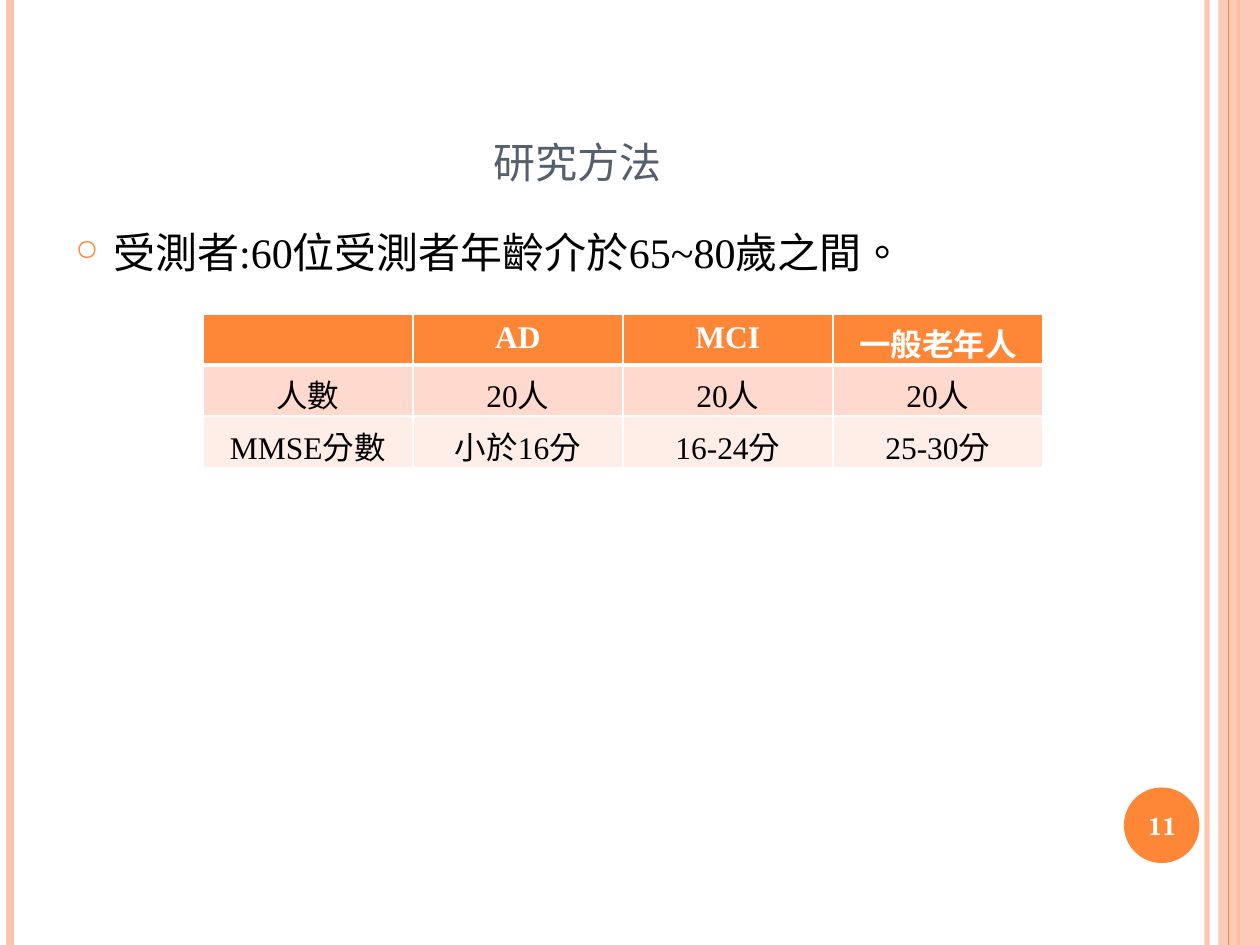
import dataclasses

import lxml.etree
import pptx
import pptx.dml.color
import pptx.enum.shapes
import pptx.enum.text
import pptx.oxml.ns
import pptx.util

RGB = pptx.dml.color.RGBColor
ORANGE = RGB(0xFE, 0x86, 0x37)
PEACH = RGB(0xFE, 0xC3, 0xAE)
BAND_DARK = RGB(0xFF, 0xD9, 0xCE)
BAND_LIGHT = RGB(0xFF, 0xED, 0xE8)
SLATE = RGB(0x57, 0x5F, 0x6D)
BLACK = RGB(0, 0, 0)
WHITE = RGB(0xFF, 0xFF, 0xFF)

CJK = "Noto Sans CJK SC"
SERIF = "Times New Roman"
SCHOOL = "TeX Gyre Schola"
WIDTH, HEIGHT = pptx.util.Inches(10), pptx.util.Inches(7.5)
MIDDLE = pptx.enum.text.MSO_ANCHOR.MIDDLE
CENTER = pptx.enum.text.PP_ALIGN.CENTER


@dataclasses.dataclass(frozen=True)
class Box:
    """A place on the slide, in shares of its width and height."""
    left: float
    top: float
    width: float
    height: float

    def emu(self) -> tuple[int, int, int, int]:
        return (int(self.left * WIDTH), int(self.top * HEIGHT),
                int(self.width * WIDTH), int(self.height * HEIGHT))


@dataclasses.dataclass(frozen=True)
class Stripe:
    x: float
    color: RGB
    points: float
    opacity: int = 100


@dataclasses.dataclass(frozen=True)
class Style:
    size: float
    color: RGB
    font: str = SERIF
    bold: bool = False


STRIPES_BEHIND = [Stripe(0.958, PEACH, 3, 93), Stripe(0.008, PEACH, 4.5),
                  Stripe(0.983, ORANGE, 1.5)]
STRIPE_FRONT = Stripe(0.975, ORANGE, 0.75)
EDGE_BAND = Box(0.967, 0, 0.033, 1)
BADGE = Box(0.892, 6.25 / 7.5, 0.06, 0.08)
BADGE_NUMBER = Box(0.889, 6.27 / 7.5, 0.067, 0.076)
TITLE = Box(0.05, 0.04, 0.817, 1.25 / 7.5)
BODY = Box(0.05, 1.75 / 7.5, 0.817, 5.33 / 7.5)
GROUPS = Box(0.161, 2.49 / 7.5, 2 / 3, 1.22 / 7.5)

GROUP_ROWS = [
    ["", "AD", "MCI", "一般老年人"],
    ["人數", "20人", "20人", "20人"],
    ["MMSE分數", "小於16分", "16-24分", "25-30分"],
]
ROW_FILLS = [ORANGE, BAND_DARK, BAND_LIGHT]


def add_xml(parent, tag: str, **attributes: str):
    child = lxml.etree.SubElement(parent, pptx.oxml.ns.qn(tag))
    for name, value in attributes.items():
        child.set(name, value)
    return child


def set_opacity(properties, percent: int) -> None:
    color = next(properties.iter(pptx.oxml.ns.qn("a:srgbClr")))
    add_xml(color, "a:alpha", val=str(percent * 1000))


def add_stripe(slide, stripe: Stripe) -> None:
    x = int(stripe.x * WIDTH)
    line = slide.shapes.add_connector(
        pptx.enum.shapes.MSO_CONNECTOR.STRAIGHT, x, 0, x, HEIGHT)
    line.line.color.rgb = stripe.color
    line.line.width = pptx.util.Pt(stripe.points)
    properties = line._element.spPr
    if stripe.opacity < 100:
        set_opacity(properties, stripe.opacity)
    add_xml(properties, "a:effectLst")


def add_plain_shape(slide, kind, box: Box, color: RGB, opacity: int = 100) -> None:
    shape = slide.shapes.add_shape(kind, *box.emu())
    shape.shadow.inherit = False
    shape.fill.solid()
    shape.fill.fore_color.rgb = color
    shape.line.fill.background()
    if opacity < 100:
        set_opacity(shape._element.spPr, opacity)


def write(paragraph, text: str, style: Style):
    run = paragraph.add_run()
    run.text = text
    font = run.font
    font.size = pptx.util.Pt(style.size)
    font.bold = style.bold
    font.color.rgb = style.color
    font.name = style.font
    properties = run._r.get_or_add_rPr()
    properties.set("lang", "zh-TW")
    add_xml(properties, "a:ea", typeface=CJK)
    return run


def add_text_frame(slide, box: Box, anchor):
    frame = slide.shapes.add_textbox(*box.emu()).text_frame
    frame.word_wrap = True
    frame.vertical_anchor = anchor
    return frame


def add_title(slide, text: str) -> None:
    frame = add_text_frame(slide, TITLE, pptx.enum.text.MSO_ANCHOR.BOTTOM)
    heading = frame.paragraphs[0]
    heading.alignment = CENTER
    run = write(heading, text, Style(30, SLATE, CJK))
    run._r.get_or_add_rPr().set("cap", "small")


def add_bullet(slide, text: str) -> None:
    frame = add_text_frame(slide, BODY, pptx.enum.text.MSO_ANCHOR.TOP)
    bullet = frame.paragraphs[0]
    bullet.space_before = pptx.util.Pt(6)
    properties = bullet._p.get_or_add_pPr()
    indent = pptx.util.Inches(0.3)
    properties.set("marL", str(indent))
    properties.set("indent", str(-indent))
    add_xml(add_xml(properties, "a:buClr"), "a:srgbClr", val=str(ORANGE))
    add_xml(properties, "a:buSzPct", val="70000")
    add_xml(properties, "a:buChar", char="○")
    write(bullet, text, Style(24, BLACK))


def set_borders(cell, bottom_points: int) -> None:
    properties = cell._tc.get_or_add_tcPr()
    sides = {"a:lnL": 1, "a:lnR": 1, "a:lnT": 1, "a:lnB": bottom_points}
    for position, (tag, points) in enumerate(sides.items()):
        border = add_xml(properties, tag, w=str(pptx.util.Pt(points)))
        add_xml(add_xml(border, "a:solidFill"), "a:srgbClr", val=str(WHITE))
        properties.insert(position, border)


def add_groups_table(slide) -> None:
    table = slide.shapes.add_table(
        len(GROUP_ROWS), len(GROUP_ROWS[0]), *GROUPS.emu()).table
    for row, (texts, fill) in enumerate(zip(GROUP_ROWS, ROW_FILLS)):
        header = row == 0
        style = Style(18, WHITE if header else BLACK, bold=header)
        for column, text in enumerate(texts):
            cell = table.cell(row, column)
            cell.fill.solid()
            cell.fill.fore_color.rgb = fill
            set_borders(cell, 3 if header else 1)
            if text:
                paragraph = cell.text_frame.paragraphs[0]
                paragraph.alignment = CENTER
                write(paragraph, text, style)
        if not header:
            set_top = table.cell(row, 0)._tc.getparent()
            for border in set_top.iter(pptx.oxml.ns.qn("a:lnT")):
                border.set("w", str(pptx.util.Pt(3 if row == 1 else 1)))


def add_page_number(slide, number: str) -> None:
    frame = add_text_frame(slide, BADGE_NUMBER, MIDDLE)
    paragraph = frame.paragraphs[0]
    paragraph.alignment = CENTER
    write(paragraph, number, Style(14, WHITE, SCHOOL, True))


def main() -> None:
    deck = pptx.Presentation()
    deck.slide_width, deck.slide_height = WIDTH, HEIGHT
    slide = deck.slides.add_slide(deck.slide_layouts[6])
    shapes = pptx.enum.shapes.MSO_SHAPE
    for stripe in STRIPES_BEHIND:
        add_stripe(slide, stripe)
    add_plain_shape(slide, shapes.RECTANGLE, EDGE_BAND, PEACH, 87)
    add_stripe(slide, STRIPE_FRONT)
    add_plain_shape(slide, shapes.OVAL, BADGE, ORANGE)
    add_title(slide, "研究方法")
    add_bullet(slide, "受測者:60位受測者年齡介於65~80歲之間。")
    add_groups_table(slide)
    add_page_number(slide, "11")
    deck.save("out.pptx")


if __name__ == "__main__":
    main()
